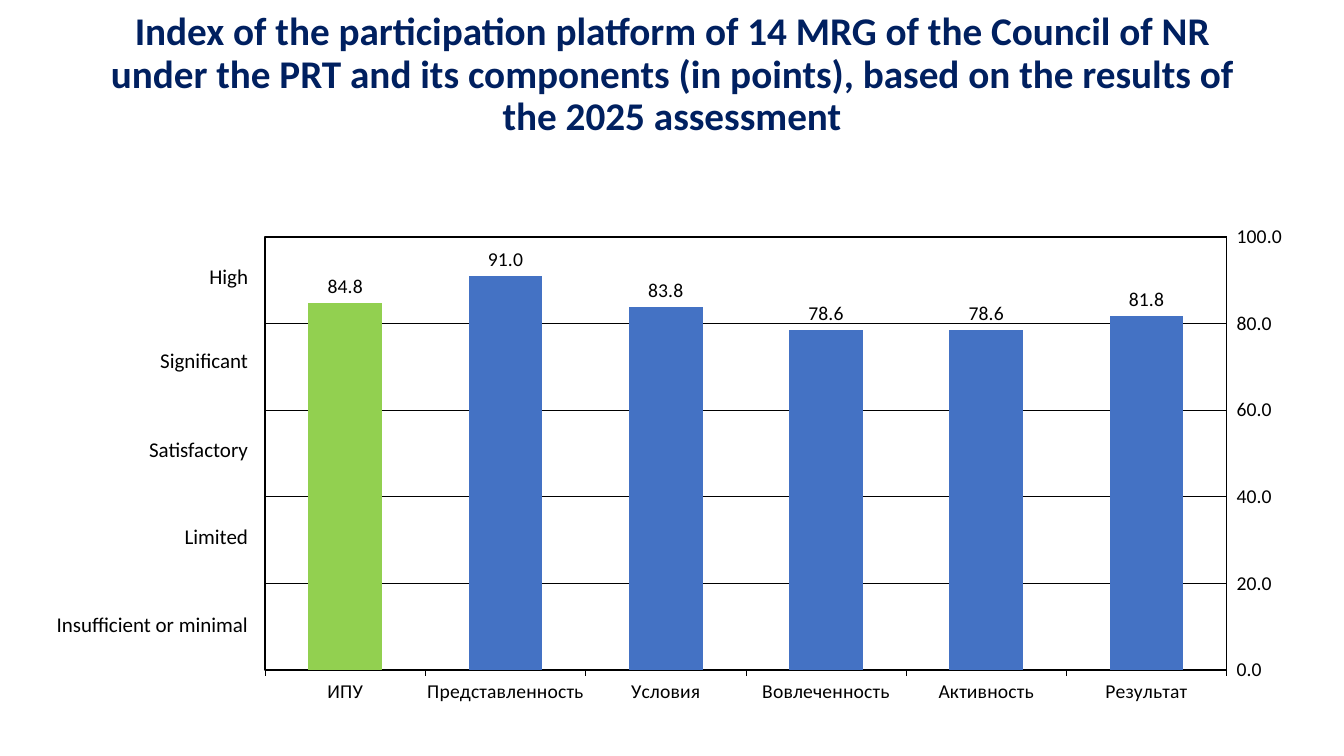
import pptx
import pptx.util
import pptx.chart.data
import pptx.dml.color
import pptx.enum.chart
import pptx.enum.shapes
import pptx.enum.text
import pptx.oxml

TITLE = ("Index of the participation platform of 14 MRG of the Council of NR under "
         "the PRT and its components (in points), based on the results of the 2025 assessment")
SCORES = {"ИПУ": 84.8, "Представленность": 91.0, "Условия": 83.8,
          "Вовлеченность": 78.6, "Активность": 78.6, "Результат": 81.8}
# level name: top in px
LEVELS = {"Insufficient or minimal": 581, "Limited": 493, "Satisfactory": 406,
          "Significant": 317, "High": 233}

FONT = "Calibri"
BLACK, WHITE, NAVY, BLUE, GREEN = "000000", "FFFFFF", "002060", "4472C4", "92D050"
CHART = (244, 215, 1059, 500)
PLOT = {"x": 0.02, "y": 0.044, "w": 0.908, "h": 0.866}  # shares of the chart frame


def px(n):
    return pptx.util.Emu(round(n * 914400 / 100.8))


def color(text):
    return pptx.dml.color.RGBColor.from_string(text)


def paint(fill, tint):
    fill.solid()
    fill.fore_color.rgb = color(tint)


def style(font, size, tint=BLACK, bold=False):
    font.name, font.size, font.bold = FONT, pptx.util.Pt(size), bold
    font.color.rgb = color(tint)


def rule(line, width=0):
    line.color.rgb = color(BLACK)
    line.width = pptx.util.Pt(width)


def write(shape, text, size, align, tint=BLACK, bold=False):
    frame = shape.text_frame
    frame.word_wrap = True
    frame.vertical_anchor = pptx.enum.text.MSO_ANCHOR.MIDDLE
    frame.text = text
    para = frame.paragraphs[0]
    para.alignment = align
    style(para.runs[0].font, size, tint, bold)
    return frame


def frame_plot(chart):
    """Fix the inner plot rectangle and give it a black border."""
    area = chart._chartSpace.chart.plotArea
    for old in area.findall(pptx.oxml.ns.qn("c:layout")):
        area.remove(old)
    names = pptx.oxml.ns.nsdecls("c", "a")
    modes = '<c:xMode val="edge"/><c:yMode val="edge"/>'
    sizes = "".join(f'<c:{key} val="{val}"/>' for key, val in PLOT.items())
    area.insert(0, pptx.oxml.parse_xml(
        f'<c:layout {names}><c:manualLayout><c:layoutTarget val="inner"/>'
        f'{modes}{sizes}</c:manualLayout></c:layout>'))
    area.append(pptx.oxml.parse_xml(
        f'<c:spPr {names}><a:noFill/><a:ln w="12700"><a:solidFill>'
        f'<a:srgbClr val="{BLACK}"/></a:solidFill></a:ln></c:spPr>'))


def add_scores(slide):
    kinds = pptx.enum.chart
    data = pptx.chart.data.CategoryChartData(number_format="0.0")
    data.categories = list(SCORES)
    data.add_series("Series 1", list(SCORES.values()))
    chart = slide.shapes.add_chart(
        kinds.XL_CHART_TYPE.COLUMN_CLUSTERED, *map(px, CHART), data).chart
    chart.has_legend = chart.has_title = False
    style(chart.font, 14)

    plot = chart.plots[0]
    plot.gap_width, plot.overlap, plot.vary_by_categories = 117, -27, False
    bars = plot.series[0]
    paint(bars.format.fill, BLUE)
    paint(bars.points[0].format.fill, GREEN)
    labels = bars.data_labels
    labels.show_value = True
    labels.position = kinds.XL_LABEL_POSITION.OUTSIDE_END
    labels.number_format, labels.number_format_is_linked = "0.0", False
    style(labels.font, 14)

    cats, vals = chart.category_axis, chart.value_axis
    for axis, width in ((cats, 0.25), (vals, 0)):
        style(axis.tick_labels.font, 14)
        rule(axis.format.line, width)
    cats.major_tick_mark = kinds.XL_TICK_MARK.OUTSIDE
    vals.major_tick_mark = kinds.XL_TICK_MARK.NONE
    # High places the numbers on the right side of the plot
    vals.tick_label_position = kinds.XL_TICK_LABEL_POSITION.HIGH
    vals.minimum_scale, vals.maximum_scale, vals.major_unit = 0, 100, 20
    vals.tick_labels.number_format = "0.0"
    vals.tick_labels.number_format_is_linked = False
    rule(vals.major_gridlines.format.line)
    frame_plot(chart)


def add_level(slide, name, top):
    box = slide.shapes.add_shape(
        pptx.enum.shapes.MSO_SHAPE.RECTANGLE, px(25), px(top), px(233), px(86))
    box.shadow.inherit = False
    paint(box.fill, WHITE)
    box.line.fill.background()
    write(box, name, 15, pptx.enum.text.PP_ALIGN.RIGHT)


def main():
    deck = pptx.Presentation()
    deck.slide_width, deck.slide_height = px(1344), px(756)
    slide = deck.slides.add_slide(deck.slide_layouts[6])
    head = slide.shapes.add_textbox(px(92), px(60), px(1160), px(78))
    frame = write(head, TITLE, 28, pptx.enum.text.PP_ALIGN.CENTER, NAVY, True)
    frame.margin_bottom = px(52)
    frame.paragraphs[0].line_spacing = 0.9
    add_scores(slide)
    for name, top in LEVELS.items():
        add_level(slide, name, top)
    deck.save("out.pptx")


if __name__ == "__main__":
    main()
